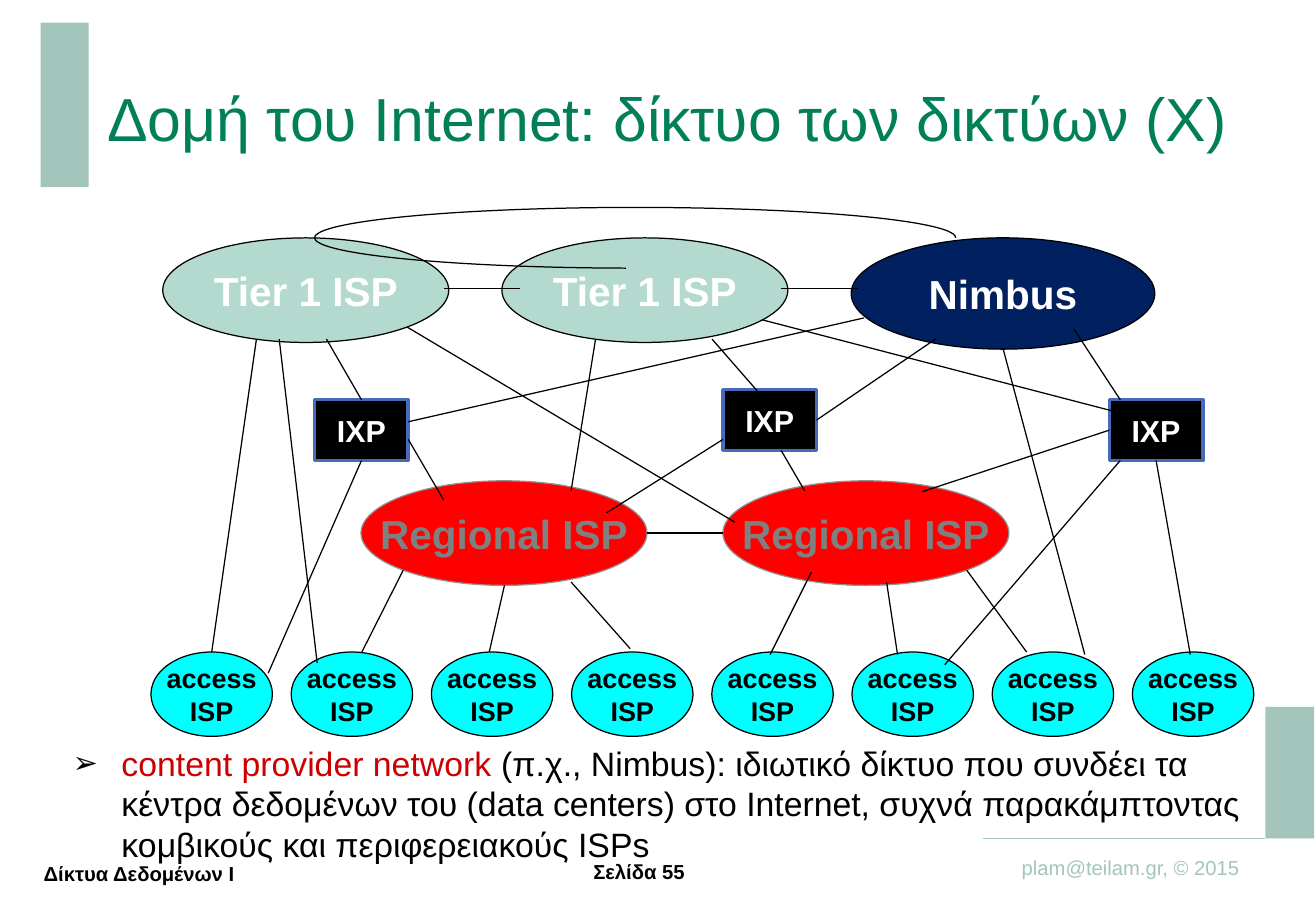
from dataclasses import dataclass

from lxml.etree import SubElement
from pptx import Presentation
from pptx.dml.color import RGBColor
from pptx.enum.shapes import MSO_CONNECTOR, MSO_SHAPE
from pptx.enum.text import MSO_ANCHOR as ANCHOR, MSO_AUTO_SIZE, PP_ALIGN as ALIGN
from pptx.oxml.ns import qn
from pptx.util import Pt


@dataclass(frozen=True)
class Theme:
    font: str = "Arial"
    title: str = "007F59"
    accent: str = "A3C5BB"
    term: str = "CC0000"
    black: str = "000000"
    white: str = "FFFFFF"
    title_size: int = 36
    body_size: int = 20
    body_leading: int = 24
    footer_size: int = 12
    hairline: float = 0.75


T = Theme()

TITLE = "Δομή του Internet: δίκτυο των δικτύων (X)"
BODY = [
    ("content provider network ", T.term),
    ("(π.χ., Nimbus): ιδιωτικό δίκτυο που συνδέει τα κέντρα δεδομένων του "
     "(data centers) στο Internet, συχνά παρακάμπτοντας κομβικούς και "
     "περιφερειακούς ISPs", T.black),
]
# text, box, colour, bold, alignment, anchor, insets
FOOTERS = [
    ("Σελίδα 55", (342, 509.5, 73.5, 14.5), T.black, True, ALIGN.CENTER, ANCHOR.MIDDLE, (0, 0)),
    ("plam@teilam.gr, © 2015", (598.5, 503.5, 145, 21.5), T.accent, False, ALIGN.LEFT,
     ANCHOR.TOP, (7.2, 3.6)),
    ("Δίκτυα Δεδομένων Ι", (16, 497, 133, 41.5), T.black, True, ALIGN.CENTER,
     ANCHOR.MIDDLE, (7.2, 3.6)),
]
BARS = [(24, 13.5, 28.5, 97.5), (750, 419, 29, 78)]
FOOTER_RULE = ((582.5, 497), (750, 497))

# kind: preset, width, height, fill, line colour, line width, text colour, text size
KINDS = {
    "access": (MSO_SHAPE.OVAL, 72, 50, "00FFFF", T.black, T.hairline, T.black, 16),
    "regional": (MSO_SHAPE.OVAL, 169.5, 62, "FF0000", "919191", T.hairline, "808080", 24),
    "ixp": (MSO_SHAPE.RECTANGLE, 55.5, 36, T.black, "486ABB", 2, T.white, 18),
    "tier": (MSO_SHAPE.OVAL, 169.5, 62, "B4DACF", T.black, T.hairline, T.white, 24),
    "content": (MSO_SHAPE.OVAL, 180, 66, "002060", T.black, T.hairline, T.white, 24),
}
ACCESS_LEFT, ACCESS_STEP, ACCESS_COUNT = 89.5, 83.1, 8
# name, kind, lines of text, left, top
NODES = [
    (f"access {i + 1}", "access", ["access", "ISP"], ACCESS_LEFT + i * ACCESS_STEP, 386.5)
    for i in range(ACCESS_COUNT)
] + [
    ("regional 1", "regional", ["Regional ISP"], 214, 285),
    ("regional 2", "regional", ["Regional ISP"], 428.5, 285),
    ("ixp 1", "ixp", ["IXP"], 186.5, 237),
    ("ixp 2", "ixp", ["IXP"], 428.5, 231),
    ("ixp 3", "ixp", ["IXP"], 657.5, 237),
    ("tier 1", "tier", ["Tier 1 ISP"], 96.5, 141),
    ("tier 2", "tier", ["Tier 1 ISP"], 297.5, 141),
    ("content", "content", ["Nimbus"], 504.5, 141),
]
PEERING_ARC = (186.5, 123, 380, 36)
ARC_START = 106.82

TOP, LEFT, BOTTOM, RIGHT = range(4)
# each end is a point or (node name, side)
LINKS = [
    # tier 1 and content provider peering
    ((308, 171), (263, 171)),
    ((508.5, 171), (463, 171)),
    # tier 1 downwards
    ((152, 201), (125.5, 386.5)),
    ((165.5, 201), (188, 393)),
    ((193.5, 201), ("ixp 1", TOP)),
    ((241.5, 194), (435.5, 309.5)),
    ((353, 201), (338.5, 291)),
    ((422, 201), (456.5, 240.5)),
    ((451.5, 189.5), (659, 243.5)),
    # content provider downwards
    ((512, 188.5), (242, 250)),
    ((554.5, 201), ("ixp 2", RIGHT)),
    ((594.5, 206.5), (643, 388)),
    ((636.5, 195), (664, 237)),
    # exchange points downwards
    ((242, 260.5), (263, 296.5)),
    (("ixp 1", BOTTOM), (159, 399)),
    ((428.5, 260.5), (359.5, 304)),
    ((463, 267), (477, 291)),
    (("ixp 3", LEFT), (546.5, 291.5)),
    ((664, 273), (560, 394)),
    (("ixp 3", BOTTOM), (705.5, 388)),
    # regional networks
    ((428.5, 316), (383.5, 316)),
    ((239, 338), (214.5, 386.5)),
    ((299, 347), (290, 386.5)),
    ((338.5, 345), (373.5, 384.5)),
    ((481, 339), (456.5, 388)),
    ((525.5, 345), (532, 388)),
    ((573, 338), (608.5, 386.5)),
]


def rgb(color):
    return RGBColor.from_string(color)


def pts(values):
    return [Pt(v) for v in values]


def set_frame(tf, anchor, insets, wrap=True):
    tf.auto_size = MSO_AUTO_SIZE.NONE
    tf.word_wrap = wrap
    tf.vertical_anchor = anchor
    tf.margin_left = tf.margin_right = Pt(insets[0])
    tf.margin_top = tf.margin_bottom = Pt(insets[1])


def add_run(p, text, size, color, bold=False):
    r = p.add_run()
    r.text = text
    r.font.name, r.font.size, r.font.bold = T.font, Pt(size), bold
    r.font.color.rgb = rgb(color)


def add_shape(shapes, preset, box, fill=None, line=None, width=T.hairline):
    sp = shapes.add_shape(preset, *pts(box))
    sp.shadow.inherit = False
    if fill:
        sp.fill.solid()
        sp.fill.fore_color.rgb = rgb(fill)
    else:
        sp.fill.background()
    if line:
        sp.line.color.rgb = rgb(line)
        sp.line.width = Pt(width)
    else:
        sp.line.fill.background()
    return sp


def add_node(shapes, kind, lines, left, top):
    preset, w, h, fill, line, width, color, size = KINDS[kind]
    sp = add_shape(shapes, preset, (left, top, w, h), fill, line, width)
    tf = sp.text_frame
    set_frame(tf, ANCHOR.MIDDLE, (0, 0), wrap=False)
    for i, text in enumerate(lines):
        p = tf.add_paragraph() if i else tf.paragraphs[0]
        p.alignment = ALIGN.CENTER
        add_run(p, text, size, color, bold=True)
    return sp


def add_link(shapes, start, end, nodes, color=T.black, width=T.hairline):
    """Draw a straight line; an end given as (node name, side) is joined to it."""
    joined = [isinstance(e[0], str) for e in (start, end)]
    a, b = [(0, 0) if j else e for j, e in zip(joined, (start, end))]
    c = shapes.add_connector(MSO_CONNECTOR.STRAIGHT, *pts(a + b))
    if joined[0]:
        c.begin_connect(nodes[start[0]], start[1])
    if joined[1]:
        c.end_connect(nodes[end[0]], end[1])
    c.line.color.rgb = rgb(color)
    c.line.width = Pt(width)
    SubElement(c._element.spPr, qn("a:effectLst"))


def add_body(shapes):
    tf = shapes.add_textbox(*pts((29.5, 436.5, 713.5, 77.5))).text_frame
    set_frame(tf, ANCHOR.TOP, (0, 3.6))
    p = tf.paragraphs[0]
    p.line_spacing = Pt(T.body_leading)
    pPr = p._p.get_or_add_pPr()
    pPr.set("marL", str(Pt(42.5)))
    pPr.set("indent", str(Pt(-29)))
    SubElement(SubElement(pPr, qn("a:buClr")), qn("a:srgbClr"), val=T.black)
    SubElement(pPr, qn("a:buSzPct"), val="90000")
    SubElement(pPr, qn("a:buFont"), typeface=T.font)
    SubElement(pPr, qn("a:buChar"), char="➢")
    for text, color in BODY:
        add_run(p, text, T.body_size, color)


def main():
    prs = Presentation()
    prs.slide_width, prs.slide_height = Pt(780), Pt(540)
    s = prs.slides.add_slide(prs.slide_layouts[5])
    shapes = s.shapes

    title = shapes.title
    title.left, title.top, title.width, title.height = pts((63.5, 24.5, 680, 70.5))
    set_frame(title.text_frame, ANCHOR.BOTTOM, (0, 3.6))
    p = title.text_frame.paragraphs[0]
    p.alignment = ALIGN.LEFT
    add_run(p, TITLE, T.title_size, T.title)

    for box in BARS:
        add_shape(shapes, MSO_SHAPE.RECTANGLE, box, T.accent)
    for text, box, color, bold, align, anchor, insets in FOOTERS:
        tf = shapes.add_textbox(*pts(box)).text_frame
        set_frame(tf, anchor, insets, wrap=False)
        tf.paragraphs[0].alignment = align
        add_run(tf.paragraphs[0], text, T.footer_size, color, bold)
    add_link(shapes, *FOOTER_RULE, {}, T.accent, 1)
    add_body(shapes)

    nodes = {name: add_node(shapes, *node) for name, *node in NODES}
    arc = add_shape(shapes, MSO_SHAPE.ARC, PEERING_ARC, line=T.black)
    arc.adjustments[0] = ARC_START * 0.6  # 60000 units a degree, scaled by 100000
    arc.adjustments[1] = 0
    for start, end in LINKS:
        add_link(shapes, start, end, nodes)

    prs.save("out.pptx")


if __name__ == "__main__":
    main()
